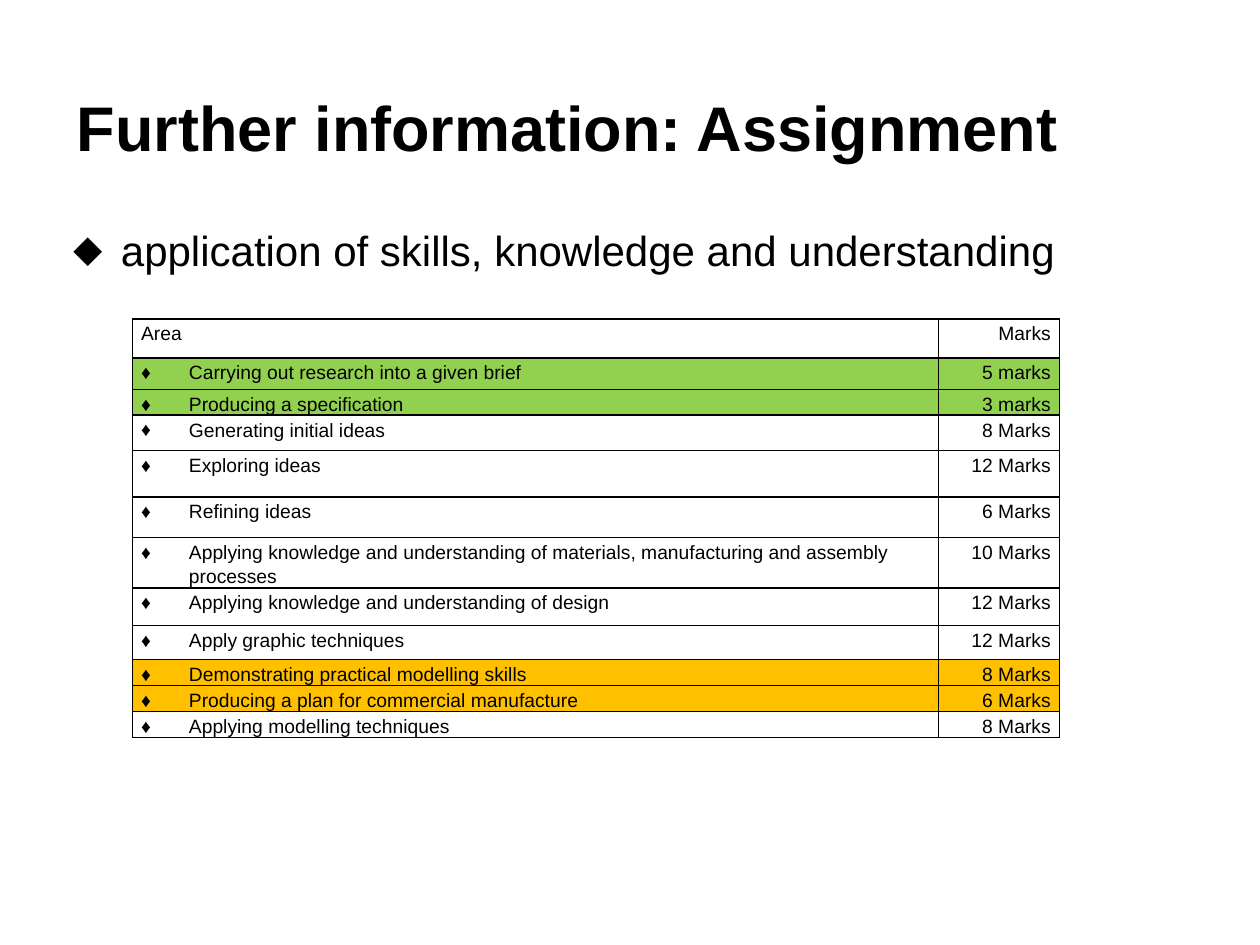
import pptx
import pptx.util
import pptx.dml.color
import pptx.enum.text
import lxml.etree

In, Pt = pptx.util.Inches, pptx.util.Pt
ALIGN = pptx.enum.text.PP_ALIGN
ANCHOR = pptx.enum.text.MSO_ANCHOR
COLORS = {"ink": "000000", "done": "92D050", "next": "FFC000"}
TITLE = "Further information: Assignment"
BODY = "application of skills, knowledge and understanding"
HEADER = ("Area", "Marks", 0.31, None)
AREAS = [
    ("Carrying out research into a given brief", "5 marks", 0.25, "done"),
    ("Producing a specification", "3 marks", 0.2, "done"),
    ("Generating initial ideas", "8 Marks", 0.28, None),
    ("Exploring ideas", "12 Marks", 0.37, None),
    ("Refining ideas", "6 Marks", 0.32, None),
    ("Applying knowledge and understanding of materials, manufacturing "
     "and assembly processes", "10 Marks", 0.4, None),
    ("Applying knowledge and understanding of design", "12 Marks", 0.3, None),
    ("Apply graphic techniques", "12 Marks", 0.27, None),
    ("Demonstrating practical modelling skills", "8 Marks", 0.2, "next"),
    ("Producing a plan for commercial manufacture", "6 Marks", 0.2, "next"),
    ("Applying modelling techniques", "8 Marks", 0.2, None),
]
ROWS = [HEADER] + AREAS
COLS = (6.4, 0.96)
INDENT = 0.38


def rgb(name):
    return pptx.dml.color.RGBColor.from_string(COLORS[name])


def add_xml(parent, tag, **attrs):
    el = lxml.etree.SubElement(parent, pptx.oxml.ns.qn(tag))
    for key, value in attrs.items():
        el.set(key, str(value))
    return el


def set_attrs(obj, **values):
    for key, value in values.items():
        setattr(obj, key, value)


def add_bullet(p, char, tab=None):
    pPr = p._p.get_or_add_pPr()
    pPr.set("marL", str(In(INDENT)))
    pPr.set("indent", str(-In(INDENT)))
    add_xml(pPr, "a:buFont", typeface="Arial")
    add_xml(pPr, "a:buChar", char=char)
    if tab:
        add_xml(add_xml(pPr, "a:tabLst"), "a:tab", pos=In(tab), algn="l")


def write(tf, text, size, bold=False, **para):
    p = tf.paragraphs[0]
    set_attrs(p, **para)
    r = p.add_run()
    r.text = text
    set_attrs(r.font, name="Arial", size=Pt(size), bold=bold)
    r.font.color.rgb = rgb("ink")
    return p


def fill_placeholder(sp, box, top_inset):
    for key, value in zip(("left", "top", "width", "height"), box):
        setattr(sp, key, In(value))
    set_attrs(sp.text_frame, word_wrap=True, vertical_anchor=ANCHOR.TOP,
              auto_size=pptx.enum.text.MSO_AUTO_SIZE.NONE,
              margin_top=In(top_inset))
    return sp.text_frame


def add_borders(cell):
    tcPr = cell._tc.get_or_add_tcPr()
    for side in ("L", "R", "T", "B"):
        ln = add_xml(tcPr, "a:ln" + side, w=Pt(1))
        add_xml(add_xml(ln, "a:solidFill"), "a:srgbClr", val=COLORS["ink"])


def add_marks_table(s):
    heights = [row[2] for row in ROWS]
    table = s.shapes.add_table(len(ROWS), len(COLS), In(1.05), In(2.53),
                               In(sum(COLS)), In(sum(heights))).table
    set_attrs(table, first_row=False, horz_banding=False)
    for col, width in zip(table.columns, COLS):
        col.width = In(width)
    for i, (area, marks, height, color) in enumerate(ROWS):
        table.rows[i].height = In(height)
        for j, text in enumerate((area, marks)):
            cell = table.cell(i, j)
            set_attrs(cell, margin_left=In(0.07), margin_right=In(0.07),
                      margin_top=In(0.01), margin_bottom=0,
                      vertical_anchor=ANCHOR.TOP)
            add_borders(cell)
            if color:
                cell.fill.solid()
                cell.fill.fore_color.rgb = rgb(color)
            else:
                cell.fill.background()
            p = write(cell.text_frame, text, 11, line_spacing=1.15,
                      alignment=ALIGN.RIGHT if j else ALIGN.LEFT)
            if i and not j:
                add_bullet(p, "♦", tab=0.5)


def main():
    prs = pptx.Presentation()
    set_attrs(prs, slide_width=In(10), slide_height=In(7.5))
    s = prs.slides.add_slide(prs.slide_layouts[1])
    title, body = s.placeholders
    tf = fill_placeholder(title, (0.51, 0.6, 9, 0.87), 0.1)
    write(tf, TITLE, 36, bold=True, alignment=ALIGN.LEFT)
    tf = fill_placeholder(body, (0.48, 1.7, 8.51, 4.02), 0.08)
    add_bullet(write(tf, BODY, 24, space_before=Pt(0)), "⬥")
    add_marks_table(s)
    prs.save("out.pptx")


if __name__ == "__main__":
    main()
